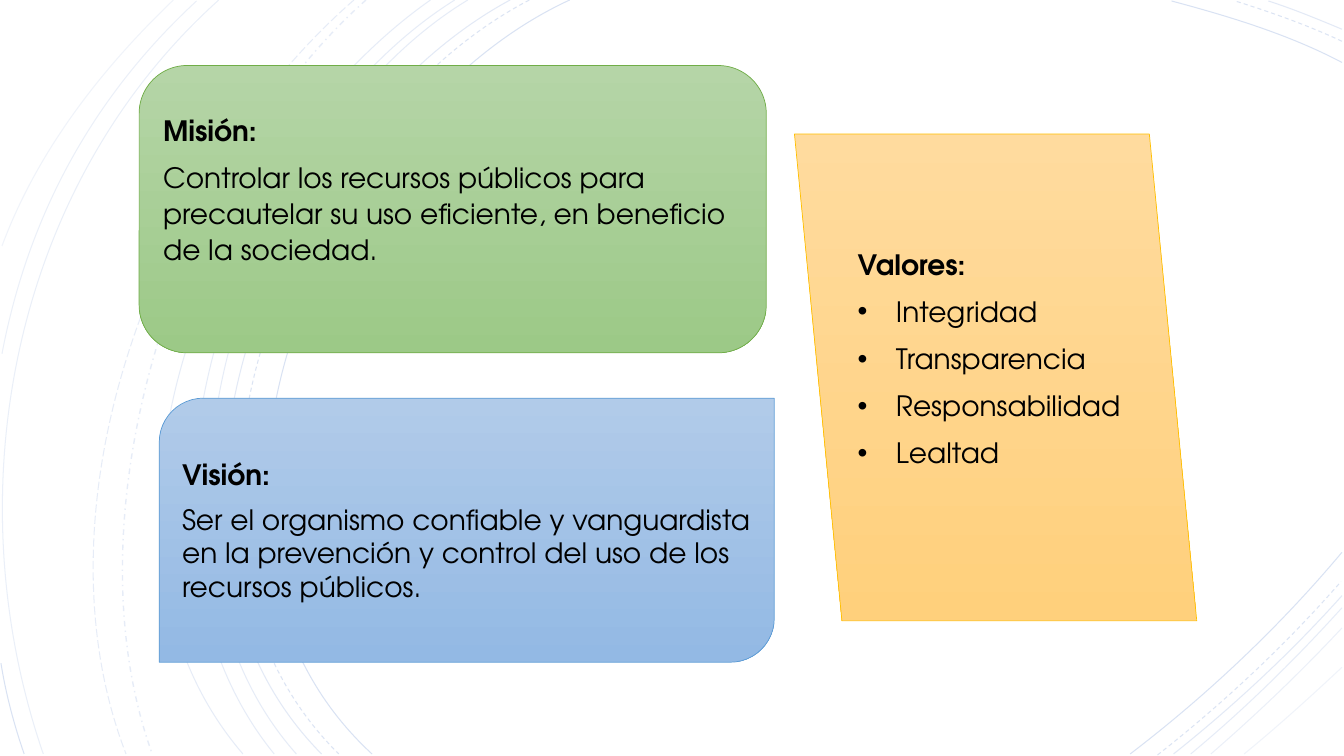
from dataclasses import dataclass
from typing import NamedTuple

from pptx import Presentation
from pptx import util as u
from pptx.dml import color as col
from pptx.enum import dml, shapes, text
from pptx.oxml import ns, xmlchemy

PX = 9144  # EMU in one px: 100 px to the inch


@dataclass(frozen=True)
class Theme:
    font: str = "TeX Gyre Adventor"
    size: int = 20
    ink: str = "000000"
    arc: str = "4472C4"
    green: tuple = ("B5D5A7", "9CC987", "70AD47")  # top, bottom, edge
    amber: tuple = ("FFDB9E", "FFD07C", "FFC000")
    blue: tuple = ("B1CBE9", "93B9E4", "5B9BD5")


class Arc(NamedTuple):
    pts: tuple  # start, two controls, end
    alpha: int
    dash: str = "SOLID"
    width: float = 0.75


class Card(NamedTuple):
    kind: str
    area: tuple
    tint: tuple
    head: str
    body: str = ""
    items: tuple = ()
    lead: float = 1.0
    foot: int = 5
    flip: bool = False
    adj: float | None = None


THEME = Theme()

ARCS = [
    Arc(((565, 0), (315, 115), (143, 540), (369, 748)), 20),
    Arc(((1331, 62), (1278, 34), (1218, 16), (1162, 1)), 20),
    Arc(((1121, 748), (1197, 690), (1269, 622), (1331, 548)), 20),
    Arc(((525, 0), (285, 125), (123, 537), (336, 748)), 18, "DASH"),
    Arc(((1331, 41), (1297, 25), (1260, 12), (1225, 1)), 18, "DASH"),
    Arc(((1148, 749), (1213, 698), (1275, 640), (1330, 577)), 18, "DASH"),
    Arc(((506, 0), (270, 127), (110, 537), (319, 748)), 15),
    Arc(((1331, 29), (1307, 19), (1283, 9), (1258, 1)), 15),
    Arc(((1164, 748), (1223, 701), (1280, 648), (1331, 591)), 15),
    Arc(((464, 0), (244, 133), (110, 541), (294, 748)), 13),
    Arc(((1181, 748), (1234, 704), (1284, 655), (1331, 603)), 12),
    Arc(((451, 0), (231, 138), (97, 533), (272, 748)), 13),
    Arc(((1201, 748), (1246, 709), (1290, 667), (1331, 623)), 10),
    Arc(((427, 0), (217, 147), (53, 529), (241, 748)), 12),
    Arc(((1234, 748), (1267, 721), (1299, 692), (1331, 662)), 8),
    Arc(((363, 0), (176, 166), (65, 509), (151, 748)), 12, "DASH_DOT", 1),
    Arc(((351, 0), (157, 169), (29, 499), (125, 748)), 12, "LONG_DASH"),
    Arc(((217, 0), (11, 185), (-46, 490), (43, 748)), 11),
    Arc(((195, 1), (92, 96), (28, 214), (2, 351)), 10),
    Arc(((1, 658), (6, 689), (14, 719), (24, 748)), 20),
    Arc(((172, 0), (100, 69), (37, 150), (2, 244)), 8),
]

CARDS = [
    Card("ROUNDED_RECTANGLE", (138, 65, 622, 285), THEME.green, "Misión:",
         "Controlar los recursos públicos para precautelar su uso eficiente, "
         "en beneficio de la sociedad.", lead=1.07, foot=46),
    Card("PARALLELOGRAM", (788, 133, 399, 483), THEME.amber, "Valores:",
         items=("Integridad", "Transparencia", "Responsabilidad", "Lealtad"),
         lead=1.07, foot=45, flip=True, adj=0.118),
    Card("ROUND_2_DIAG_RECTANGLE", (158, 395, 610, 262), THEME.blue, "Visión:",
         "Ser el organismo confiable y vanguardista en la prevención y control "
         "del uso de los recursos públicos."),
]


def rgb(code: str) -> col.RGBColor:
    return col.RGBColor.from_string(code)


def add_tag(parent, tag: str, **attrs: str):
    """Append one drawing element with its attributes."""
    node = xmlchemy.OxmlElement(tag)
    for key, val in attrs.items():
        node.set(key, val)
    parent.append(node)
    return node


def write(frame, words: str, *, bold: bool = False, lead: float = 1.0,
          bullet: bool = False) -> None:
    """Fill the first paragraph if it is free, else add one."""
    para = frame.paragraphs[0]
    if para.runs:
        para = frame.add_paragraph()
    para.alignment = text.PP_ALIGN.LEFT
    para.line_spacing = lead
    para.space_after = u.Pt(8)
    run = para.add_run()
    run.text = words
    font = run.font
    font.name, font.size, font.bold = THEME.font, u.Pt(THEME.size), bold
    font.color.rgb = rgb(THEME.ink)
    if bullet:
        props = para._p.get_or_add_pPr()
        props.set("marL", str(38 * PX))
        props.set("indent", str(-38 * PX))
        add_tag(props, "a:buFont", typeface="Arial")
        add_tag(props, "a:buChar", char="•")


def set_frame(frame, foot: int) -> None:
    frame.word_wrap = True
    frame.vertical_anchor = text.MSO_ANCHOR.MIDDLE
    frame.margin_left = frame.margin_right = 10 * PX
    frame.margin_top, frame.margin_bottom = 5 * PX, foot * PX


def draw_arc(slide, arc: Arc) -> None:
    first, *rest = arc.pts
    pen = slide.shapes.build_freeform(*first, scale=PX)
    pen.add_line_segments(rest, close=False)
    shape = pen.convert_to_shape()
    # Turn the three straight pieces into one cubic curve
    props = shape._element.spPr
    route = props.find(".//" + ns.qn("a:path"))
    legs = route.findall(ns.qn("a:lnTo"))
    bend = add_tag(route, "a:cubicBezTo")
    for leg in legs:
        bend.append(leg[0])
        route.remove(leg)
    shape.shadow.inherit = False
    shape.fill.background()
    shape.line.width = u.Pt(arc.width)
    shape.line.color.rgb = rgb(THEME.arc)
    shape.line.dash_style = dml.MSO_LINE[arc.dash]
    tint = props.find(".//" + ns.qn("a:srgbClr"))
    add_tag(tint, "a:alpha", val=str(arc.alpha * 1000))


def draw_card(slide, card: Card) -> None:
    shape = slide.shapes.add_shape(shapes.MSO_SHAPE[card.kind],
                                   *(n * PX for n in card.area))
    shape.shadow.inherit = False
    if card.adj is not None:
        shape.adjustments[0] = card.adj
    if card.flip:
        shape._element.spPr.find(ns.qn("a:xfrm")).set("flipH", "1")
    top, base, edge = card.tint
    shape.fill.gradient()
    shape.fill.gradient_angle = 270
    for stop, tone in zip(shape.fill.gradient_stops, (top, base)):
        stop.color.rgb = rgb(tone)
    shape.line.color.rgb = rgb(edge)
    shape.line.width = u.Pt(0.5)
    frame = shape.text_frame
    set_frame(frame, card.foot)
    write(frame, card.head, bold=True, lead=card.lead)
    if card.body:
        write(frame, card.body, lead=card.lead)
    for item in card.items:
        write(frame, item, lead=card.lead, bullet=True)


def main() -> None:
    deck = Presentation()
    deck.slide_width, deck.slide_height = 1333 * PX, 750 * PX
    slide = deck.slides.add_slide(deck.slide_layouts[6])

    # Background arcs
    for arc in ARCS:
        draw_arc(slide, arc)
    # Mission, values and vision cards
    for card in CARDS:
        draw_card(slide, card)
    deck.save("out.pptx")


if __name__ == "__main__":
    main()
